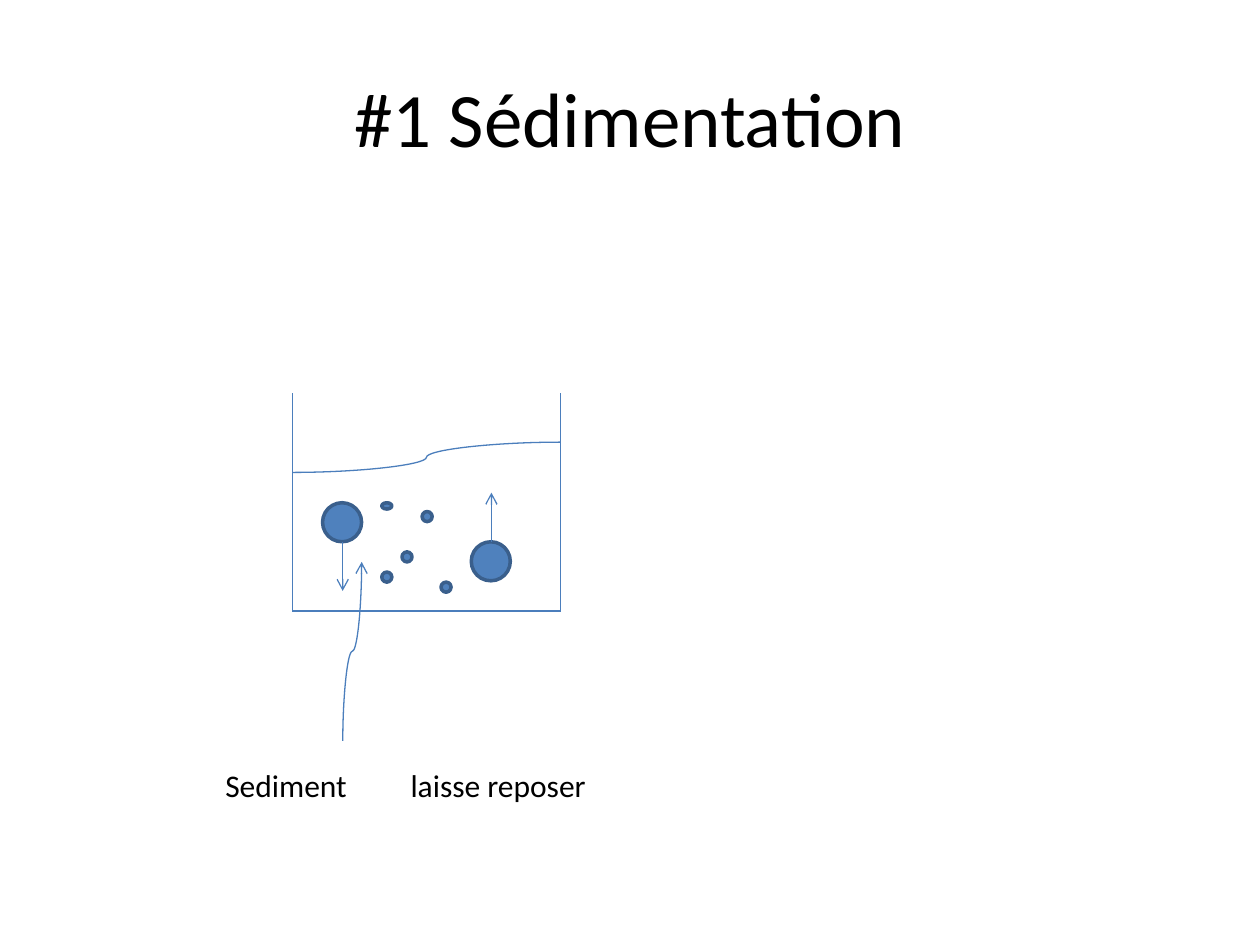
from lxml import etree
from pptx import Presentation
from pptx.dml.color import RGBColor
from pptx.enum.shapes import MSO_CONNECTOR, MSO_SHAPE
from pptx.enum.text import MSO_ANCHOR, PP_ALIGN
from pptx.oxml.ns import qn
from pptx.util import Inches, Pt

STRAIGHT, CURVE = MSO_CONNECTOR.STRAIGHT, MSO_CONNECTOR.CURVE
OVAL = MSO_SHAPE.OVAL
TOP, MIDDLE = MSO_ANCHOR.TOP, MSO_ANCHOR.MIDDLE
LEFT, CENTER = PP_ALIGN.LEFT, PP_ALIGN.CENTER

FONT = "Calibri"
BLACK, LINE, FILL, OUTLINE = "000000", "4B7EBC", "4F81BD", "3A5F8C"

TANK_LEFT, TANK_RIGHT, TANK_TOP, TANK_BOTTOM = 2.32, 4.45, 3.12, 4.85
BALL = 0.31
GRAIN = 0.08
SINKING, RISING = (2.56, 3.99), (3.74, 4.3)
GRAINS = [(3.03, 3.99, 0.05), (3.35, 4.06, GRAIN), (3.19, 4.38, GRAIN),
          (3.5, 4.62, GRAIN), (3.03, 4.54, GRAIN)]


def color(hex_string):
    return RGBColor.from_string(hex_string)


def add_text(slide, box, text, size, align=LEFT, anchor=TOP):
    frame = slide.shapes.add_textbox(*map(Inches, box)).text_frame
    frame.word_wrap = True
    frame.vertical_anchor = anchor
    paragraph = frame.paragraphs[0]
    paragraph.alignment = align
    run = paragraph.add_run()
    run.text = text
    run.font.name = FONT
    run.font.size = Pt(size)
    run.font.color.rgb = color(BLACK)
    return paragraph


def set_tab_stop(paragraph, position):
    tabs = etree.SubElement(paragraph._p.get_or_add_pPr(), qn("a:tabLst"))
    etree.SubElement(tabs, qn("a:tab"), pos=str(Inches(position)), algn="l")


def add_line(slide, start, end, kind=STRAIGHT, arrow=False):
    line = slide.shapes.add_connector(kind, *map(Inches, (*start, *end)))
    line.line.color.rgb = color(LINE)
    line.line.width = Pt(0.75)
    properties = line._element.spPr
    if arrow:
        etree.SubElement(properties.find(qn("a:ln")), qn("a:tailEnd"), type="arrow")
    etree.SubElement(properties, qn("a:effectLst"))
    return line


def add_upright_curve(slide, start, end):
    """Draw a curved arrow that leaves and arrives vertically, by a quarter turn."""
    (x1, y1), (x2, y2) = start, end
    mid_x, mid_y = (x1 + x2) / 2, (y1 + y2) / 2
    dx, dy = (y1 - y2) / 2, (x2 - x1) / 2
    curve = add_line(slide, (mid_x + dx, mid_y + dy), (mid_x - dx, mid_y - dy),
                     CURVE, arrow=True)
    curve._element.spPr.find(qn("a:xfrm")).set("rot", str(90 * 60000))


def add_particle(slide, left, top, width, height):
    particle = slide.shapes.add_shape(OVAL, *map(Inches, (left, top, width, height)))
    particle.shadow.inherit = False
    particle.fill.solid()
    particle.fill.fore_color.rgb = color(FILL)
    particle.line.color.rgb = color(OUTLINE)
    particle.line.width = Pt(2)


def add_tank(slide):
    corners = [(TANK_LEFT, TANK_TOP), (TANK_LEFT, TANK_BOTTOM),
               (TANK_RIGHT, TANK_BOTTOM), (TANK_RIGHT, TANK_TOP)]
    for start, end in zip(corners, corners[1:]):
        add_line(slide, start, end)
    add_line(slide, (TANK_LEFT, 3.75), (TANK_RIGHT, 3.51), CURVE)


def main():
    deck = Presentation()
    deck.slide_width, deck.slide_height = Inches(10), Inches(7.5)
    slide = deck.slides.add_slide(deck.slide_layouts[6])

    add_text(slide, (0.5, 0.3, 9, 1.25), "#1 Sédimentation", 44, CENTER, MIDDLE)
    add_tank(slide)
    for left, top in (SINKING, RISING):
        add_particle(slide, left, top, BALL, BALL)
    add_line(slide, (2.72, 4.3), (2.72, 4.69), arrow=True)
    add_line(slide, (3.9, 4.3), (3.9, 3.91), arrow=True)
    for left, top, height in GRAINS:
        add_particle(slide, left, top, GRAIN, height)

    add_upright_curve(slide, (2.72, 5.88), (2.87, 4.46))
    caption = add_text(slide, (1.69, 6.03, 6.3, 0.4), "Sediment\tlaisse reposer", 18)
    set_tab_stop(caption, 1.47)

    deck.save("out.pptx")


if __name__ == "__main__":
    main()
